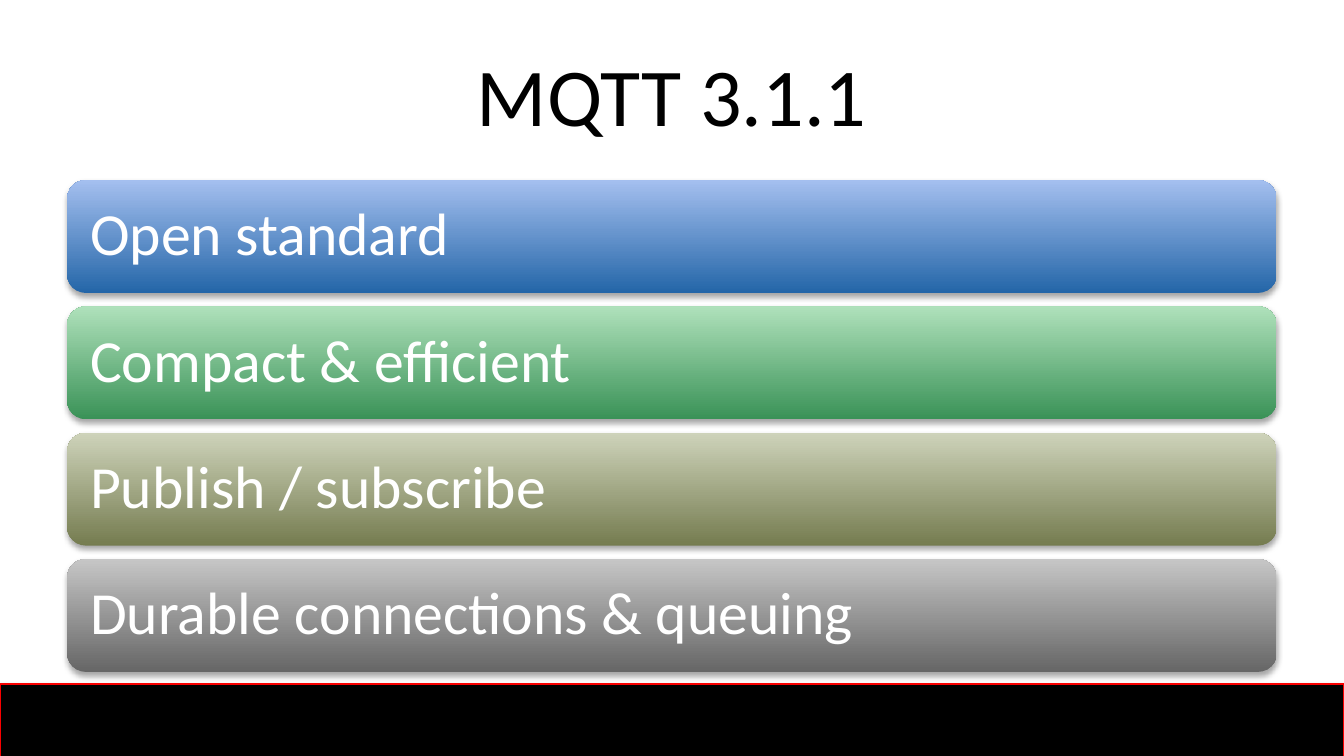
from dataclasses import dataclass

from lxml import etree
from pptx import Presentation
from pptx.dml.color import RGBColor
from pptx.enum.shapes import MSO_SHAPE as Shape
from pptx.enum.text import MSO_ANCHOR as Anchor, PP_ALIGN as Align
from pptx.oxml.ns import qn
from pptx.util import Inches, Pt


@dataclass(frozen=True)
class Theme:
    font: str = "Calibri"
    title_size: int = 44
    bar_size: int = 32
    dark: str = "000000"
    light: str = "FFFFFF"
    footer_line: str = "F90000"


THEME = Theme()
BARS = [
    ("Open standard", "2466A8", "A4BFEF"),
    ("Compact & efficient", "3A9257", "AFE1BB"),
    ("Publish / subscribe", "757C50", "CED3BA"),
    ("Durable connections & queuing", "666666", "C6C6C6"),
]
BAR_LEFT, BAR_TOP, BAR_WIDTH, BAR_HEIGHT, BAR_STEP = 0.5, 1.34, 9, 0.84, 0.94


def rgb(value):
    return RGBColor.from_string(value)


def style_text(paragraph, size, color, align):
    paragraph.alignment = align
    font = paragraph.runs[0].font
    font.name = THEME.font
    font.size = Pt(size)
    font.color.rgb = rgb(color)


def add_soft_shadow(shape):
    shape.shadow.inherit = False
    effects = shape.element.spPr.find(qn("a:effectLst"))
    shadow = etree.SubElement(
        effects, qn("a:outerShdw"), blurRad=str(Pt(3.1)), dist=str(Pt(1.8)),
        dir="5400000", rotWithShape="0",
    )
    color = etree.SubElement(shadow, qn("a:srgbClr"), val=THEME.dark)
    etree.SubElement(color, qn("a:alpha"), val="35000")


def add_footer(slide):
    footer = slide.shapes.add_shape(
        Shape.RECTANGLE, Inches(0), Inches(5.09), Inches(10), Inches(0.54)
    )
    footer.fill.solid()
    footer.fill.fore_color.rgb = rgb(THEME.dark)
    footer.line.color.rgb = rgb(THEME.footer_line)
    footer.line.width = Pt(0.75)
    add_soft_shadow(footer)


def add_title(slide, wording):
    title = slide.shapes.title
    title.left, title.top = Inches(0.5), Inches(0.23)
    title.width, title.height = Inches(9), Inches(0.94)
    frame = title.text_frame
    frame.text = wording
    frame.vertical_anchor = Anchor.MIDDLE
    style_text(frame.paragraphs[0], THEME.title_size, THEME.dark, Align.CENTER)


def add_bar(slide, top, wording, bottom_color, top_color):
    bar = slide.shapes.add_shape(
        Shape.ROUNDED_RECTANGLE, Inches(BAR_LEFT), Inches(top),
        Inches(BAR_WIDTH), Inches(BAR_HEIGHT),
    )
    bar.fill.gradient()
    bar.fill.gradient_angle = 90
    for stop, color in zip(bar.fill.gradient_stops, (bottom_color, top_color)):
        stop.color.rgb = rgb(color)
    bar.line.fill.background()
    add_soft_shadow(bar)

    frame = bar.text_frame
    frame.text = wording
    frame.word_wrap = True
    frame.vertical_anchor = Anchor.MIDDLE
    frame.margin_left = frame.margin_right = Inches(0.13)
    frame.margin_top = frame.margin_bottom = Inches(0.13)
    label = frame.paragraphs[0]
    label.line_spacing = 0.9
    style_text(label, THEME.bar_size, THEME.light, Align.LEFT)


def main():
    deck = Presentation()
    deck.slide_width = Inches(10)
    deck.slide_height = deck.slide_width * 9 // 16
    slide = deck.slides.add_slide(deck.slide_layouts[5])
    add_footer(slide)
    add_title(slide, "MQTT 3.1.1")
    for index, (wording, bottom_color, top_color) in enumerate(BARS):
        add_bar(slide, BAR_TOP + index * BAR_STEP, wording, bottom_color, top_color)
    deck.save("out.pptx")


if __name__ == "__main__":
    main()
